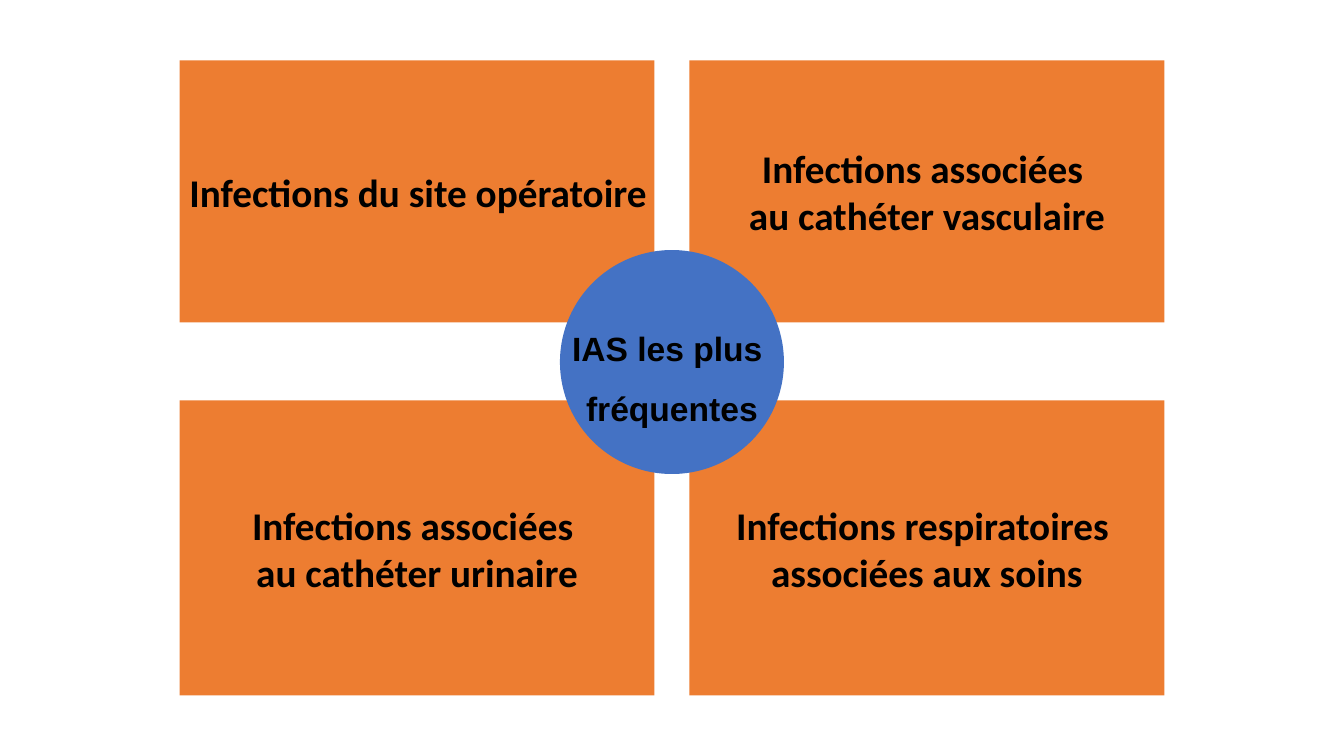
from pptx import Presentation
from pptx.dml.color import RGBColor
from pptx.enum.shapes import MSO_SHAPE
from pptx.enum.text import MSO_ANCHOR, PP_ALIGN
from pptx.util import Pt

# Content: rows of infection types around the central theme
INFECTIONS = [
    [["Infections du site opératoire"],
     ["Infections associées ", "au cathéter vasculaire"]],
    [["Infections associées ", "au cathéter urinaire"],
     ["Infections respiratoires ", "associées aux soins"]],
]
THEME = ["IAS les plus ", "fréquentes"]

COLORS = {"panel": "ED7D31", "circle": "4472C4", "text": "000000"}

# Layout in points
PAGE_WIDTH, PAGE_HEIGHT = 960, 540
PANEL_WIDTH, COLUMN_GAP = 339.2, 25
ROWS = [(43.2, 187.2), (286, 210.8)]  # top, height
CIRCLE_SIZE, CIRCLE_TOP = 160, 178.6


def add_block(page, kind, area, color, lines, *, font="Calibri", size=28,
              align=PP_ALIGN.CENTER, spacing=None, insets=None):
    """Add a filled shape with one bold paragraph per line."""
    box = page.shapes.add_shape(kind, *[Pt(length) for length in area])
    box.shadow.inherit = False
    box.fill.solid()
    box.fill.fore_color.rgb = RGBColor.from_string(COLORS[color])
    box.line.fill.background()
    frame = box.text_frame
    frame.word_wrap = False
    frame.vertical_anchor = MSO_ANCHOR.MIDDLE
    if insets:
        (frame.margin_left, frame.margin_top,
         frame.margin_right, frame.margin_bottom) = map(Pt, insets)
    for index, line in enumerate(lines):
        para = frame.add_paragraph() if index else frame.paragraphs[0]
        para.alignment = align
        para.line_spacing = spacing
        span = para.add_run()
        span.text = line
        span.font.name = font
        span.font.size = Pt(size)
        span.font.bold = True
        span.font.color.rgb = RGBColor.from_string(COLORS["text"])


def main():
    deck = Presentation()
    deck.slide_width, deck.slide_height = Pt(PAGE_WIDTH), Pt(PAGE_HEIGHT)
    page = deck.slides.add_slide(deck.slide_layouts[6])

    # Four panels, centred across the page
    first_left = (PAGE_WIDTH - 2 * PANEL_WIDTH - COLUMN_GAP) / 2
    for (top, height), panels in zip(ROWS, INFECTIONS):
        for column, lines in enumerate(panels):
            left = first_left + column * (PANEL_WIDTH + COLUMN_GAP)
            align = PP_ALIGN.CENTER if len(lines) > 1 else PP_ALIGN.LEFT
            add_block(page, MSO_SHAPE.RECTANGLE, (left, top, PANEL_WIDTH, height),
                      "panel", lines, align=align)

    # Central circle
    circle_left = (PAGE_WIDTH - CIRCLE_SIZE) / 2
    add_block(page, MSO_SHAPE.OVAL, (circle_left, CIRCLE_TOP, CIRCLE_SIZE, CIRCLE_SIZE),
              "circle", THEME, font="Arial", size=24, spacing=1.5,
              insets=(0, 8.64, 0, 0))

    deck.save("out.pptx")


if __name__ == "__main__":
    main()
